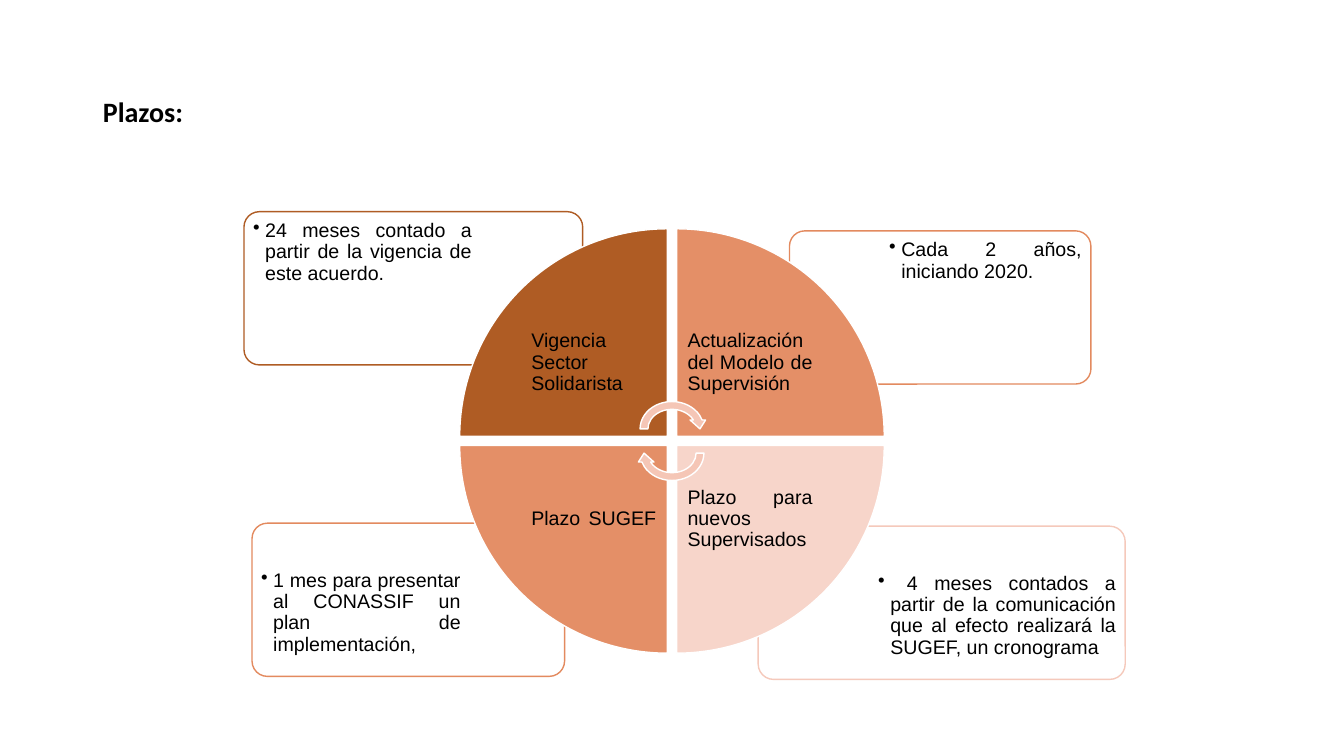
"""Build the deadlines slide: a four-part wheel with a note at each corner."""
from lxml import etree
from pptx import Presentation
from pptx import util as u
from pptx.dml.color import RGBColor
from pptx.enum import shapes, text
from pptx.oxml.ns import qn

BLACK = RGBColor(0x00, 0x00, 0x00)
WHITE = RGBColor(0xFF, 0xFF, 0xFF)
BROWN = RGBColor(0xAF, 0x5C, 0x24)
AMBER = RGBColor(0xE3, 0x8A, 0x5F)
CORAL = RGBColor(0xE4, 0x8F, 0x67)
ROSE = RGBColor(0xF5, 0xC9, 0xBB)
PALE = RGBColor(0xF7, 0xD5, 0xCA)
PINK = RGBColor(0xF5, 0xC6, 0xB6)

WIDE, HIGH = 13.33, 7.5
TITLE = "Plazos:"

# column, row, label, wedge fill, turn
WEDGES = [
    (0, 0, "Vigencia Sector Solidarista ", BROWN, 0),
    (1, 0, "Actualización del Modelo de Supervisión", CORAL, 90),
    (1, 1, "Plazo para nuevos Supervisados", PALE, 180),
    (0, 1, "Plazo SUGEF ", CORAL, 270),
]
# column, row, note, outline, left, top, width, text width
NOTES = [
    (1, 1, " 4 meses contados a partir de la comunicación que al efecto "
     "realizará la SUGEF, un cronograma", ROSE, 7.52, 5.22, 3.64, 2.48),
    (0, 1, "1 mes para presentar al CONASSIF un plan de implementación, ",
     AMBER, 2.5, 5.19, 3.1, 2.1),
    (1, 0, "Cada 2 años, iniciando 2020.", AMBER, 7.83, 2.29, 2.99, 2.03),
    (0, 0, "24 meses contado a partir de la vigencia de este acuerdo.",
     BROWN, 2.42, 2.1, 3.36, 2.29),
]

MID_X, MID_Y = WIDE / 2, 4.375
GAP, SIDE, LABEL = 0.09, 2.06, 1.46
NOTE_H, TEXT_H, PAD = 1.52, 1.08, 0.03
ARROW_W, ARROW_H, ARROW_GAP = 0.71, 0.62, 0.24
KIND = shapes.MSO_SHAPE


def inches(*box):
    return [u.Inches(n) for n in box]


def near(mid, side, cell):
    """Start of a span beside the wheel's centre line."""
    return mid + GAP / 2 if cell else mid - GAP / 2 - side


def draw(slide, kind, box, fill, line, turn=0):
    shape = slide.shapes.add_shape(kind, *inches(*box))
    shape.shadow.inherit = False
    shape.fill.solid()
    shape.fill.fore_color.rgb = fill
    shape.line.color.rgb = line
    shape.line.width = u.Pt(1)
    shape.rotation = turn
    return shape


def write(par, words, size, font, bold=False):
    par.line_spacing = 0.9
    run = par.add_run()
    run.text = words
    run.font.size = u.Pt(size)
    run.font.name = font
    run.font.bold = bold
    run.font.color.rgb = BLACK


def label(slide, box, words, inset, anchor, after):
    frame = slide.shapes.add_textbox(*inches(*box)).text_frame
    frame.word_wrap = True
    frame.vertical_anchor = anchor
    frame.margin_left = frame.margin_right = u.Inches(inset)
    frame.margin_top = frame.margin_bottom = u.Inches(inset)
    par = frame.paragraphs[0]
    par.alignment = text.PP_ALIGN.JUSTIFY
    par.space_after = u.Pt(after)
    write(par, words, 14, "Arial")
    return par


def bullet(par):
    par.level = 1
    props = par._p.get_or_add_pPr()
    props.set("marL", str(u.Inches(0.12)))
    props.set("indent", str(u.Inches(-0.12)))
    etree.SubElement(props, qn("a:buChar")).set("char", "•")


def main():
    deck = Presentation()
    deck.slide_width, deck.slide_height = inches(WIDE, HIGH)
    slide = deck.slides.add_slide(deck.slide_layouts[5])

    title = slide.shapes.title
    title.left, title.top, title.width, title.height = inches(
        0.92, 0.4, 11.5, 1.45)
    title.text_frame.vertical_anchor = text.MSO_ANCHOR.MIDDLE
    head = title.text_frame.paragraphs[0]
    head.alignment = text.PP_ALIGN.LEFT
    write(head, TITLE, 20, "Calibri", True)

    for col, row, words, color, left, top, width, span in NOTES:
        card = draw(slide, KIND.ROUNDED_RECTANGLE,
                    (left, top, width, NOTE_H), WHITE, color)
        card.adjustments[0] = 0.1
        x = left + (width - span - PAD if col else PAD)
        y = top + (NOTE_H - TEXT_H - PAD if row else PAD)
        bullet(label(slide, (x, y, span, TEXT_H), words, 0.06,
                     text.MSO_ANCHOR.TOP, 2))

    for col, row, words, color, turn in WEDGES:
        wedge, inner = [
            (near(MID_X, side, col), near(MID_Y, side, row), side, side)
            for side in (SIDE, LABEL)]
        draw(slide, KIND.PIE_WEDGE, wedge, color, WHITE, turn)
        label(slide, inner, words, 0.11, text.MSO_ANCHOR.MIDDLE, 5)

    for turn, shift in ((0, -ARROW_GAP / 2), (180, ARROW_GAP / 2)):
        box = (MID_X - ARROW_W / 2, MID_Y - ARROW_H / 2 + shift,
               ARROW_W, ARROW_H)
        draw(slide, KIND.CIRCULAR_ARROW, box, PINK, WHITE, turn)

    deck.save("out.pptx")


if __name__ == "__main__":
    main()
